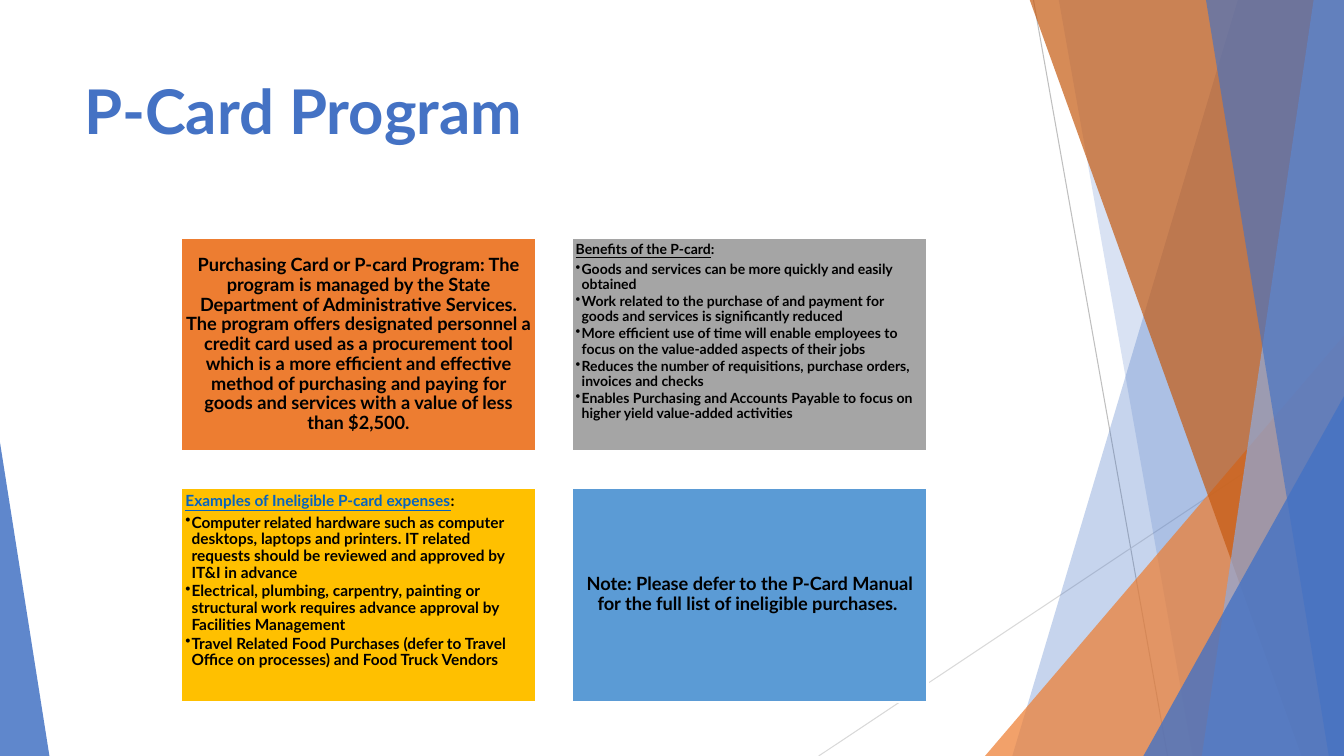
import dataclasses
import typing

import lxml.etree
import pptx
import pptx.dml.color
import pptx.enum.shapes
import pptx.enum.text
import pptx.oxml.ns
import pptx.util

Inches = pptx.util.Inches
Pt = pptx.util.Pt
qn = pptx.oxml.ns.qn
ALIGN = pptx.enum.text.PP_ALIGN
ANCHOR = pptx.enum.text.MSO_ANCHOR
SHAPE = pptx.enum.shapes.MSO_SHAPE

WIDE, HIGH, TOP = 13.33, 7.5, -0.01
FONT = "Lato"
COLORS = {
    "blue": "4472C4", "pale": "8FAADC", "sky": "5B9BD5", "link": "0563C1",
    "orange": "ED7D31", "rust": "C55A11", "gold": "FFC000", "gray": "A5A5A5",
    "black": "000000", "white": "FFFFFF", "dark": "BFBFBF", "light": "D9D9D9",
}


@dataclasses.dataclass
class Ray:
    start: tuple[float, float]
    end: tuple[float, float]
    color: str


@dataclasses.dataclass
class Band:
    top: float
    base: float
    color: str
    alpha: int


@dataclasses.dataclass
class Wedge:
    left: float
    top: float
    width: float
    apex: float
    color: str
    alpha: int


@dataclasses.dataclass
class Panel:
    color: str
    size: int
    head: str
    inset: float = 0.05
    ink: str = "black"
    items: tuple[str, ...] = ()


RAYS = [
    Ray((10.25, 0), (11.58, HIGH), "dark"),
    Ray((WIDE, 4.03), (8.12, HIGH), "light"),
]
DECOR = [
    Band(12.28, 10.04, "blue", 30),
    Band(10.5, 11.83, "blue", 20),
    Wedge(9.77, 3.33, 3.56, 1, "orange", 72),
    Band(10.21, 12.91, "rust", 70),
    Band(13.03, 11.92, "pale", 70),
    Band(11.96, 13.18, "blue", 65),
    Wedge(11.34, 3.93, 1.99, 1, "blue", 80),
    Wedge(0, 4.39, 0.49, 0, "blue", 85),
]
PANELS = [
    Panel("orange", 13, "Purchasing Card or P-card Program: The program is managed by the "
          "State Department of Administrative Services. The program offers designated "
          "personnel a credit card used as a procurement tool which is a more efficient "
          "and effective method of purchasing and paying for goods and services with a "
          "value of less than $2,500."),
    Panel("gray", 10, "Benefits of the P-card", 0.04, items=(
        "Goods and services can be more quickly and easily obtained",
        "Work related to the purchase of and payment for goods and services is "
        "significantly reduced",
        "More efficient use of time will enable employees to focus on the value-added "
        "aspects of their jobs",
        "Reduces the number of requisitions, purchase orders, invoices and checks",
        "Enables Purchasing and Accounts Payable to focus on higher yield value-added "
        "activities")),
    Panel("gold", 11, "Examples of Ineligible P-card expenses", ink="link", items=(
        "Computer related hardware such as computer desktops, laptops and printers. IT "
        "related requests should be reviewed and approved by IT&I in advance",
        "Electrical, plumbing, carpentry, painting or structural work requires advance "
        "approval by Facilities Management",
        "Travel Related Food Purchases (defer to Travel Office on processes) and Food "
        "Truck Vendors")),
    Panel("sky", 13, "Note: Please defer to the P-Card Manual for the full list of "
          "ineligible purchases. "),
]


def apply(target: typing.Any, values: dict[str, typing.Any]) -> None:
    for name, value in values.items():
        setattr(target, name, value)


def tint(name: str) -> pptx.dml.color.RGBColor:
    return pptx.dml.color.RGBColor.from_string(COLORS[name])


def paint(shape: typing.Any, color: str, alpha: int = 100) -> None:
    shape.shadow.inherit = False
    shape.fill.solid()
    shape.fill.fore_color.rgb = tint(color)
    shape.line.fill.background()
    if alpha < 100:
        node = shape._element.spPr.find(qn("a:solidFill")).find(qn("a:srgbClr"))
        lxml.etree.SubElement(node, qn("a:alpha")).set("val", str(alpha * 1000))


def write(para: typing.Any, text: str, size: int, color: str, under: bool = False) -> None:
    run = para.add_run()
    run.text = text
    apply(run.font, {"name": FONT, "size": Pt(size), "bold": True, "underline": under})
    run.font.color.rgb = tint(color)


def draw_ray(slide: typing.Any, ray: Ray) -> None:
    ends = [Inches(v) for v in ray.start + ray.end]
    line = slide.shapes.add_connector(pptx.enum.shapes.MSO_CONNECTOR.STRAIGHT, *ends)
    line.line.width = Pt(0.75)
    line.line.color.rgb = tint(ray.color)
    lxml.etree.SubElement(line._element.spPr, qn("a:effectLst"))


def draw_band(slide: typing.Any, band: Band) -> None:
    path = [(band.top, TOP), (WIDE, TOP), (WIDE, HIGH), (band.base, HIGH)]
    points = [(Inches(x), Inches(y)) for x, y in path]
    form = slide.shapes.build_freeform(*points[0])
    form.add_line_segments(points[1:], close=True)
    paint(form.convert_to_shape(), band.color, band.alpha)


def draw_wedge(slide: typing.Any, wedge: Wedge) -> None:
    box = [Inches(v) for v in (wedge.left, wedge.top, wedge.width, HIGH - wedge.top)]
    shape = slide.shapes.add_shape(SHAPE.ISOSCELES_TRIANGLE, *box)
    shape.adjustments[0] = wedge.apex
    paint(shape, wedge.color, wedge.alpha)


def draw_panel(slide: typing.Any, panel: Panel, place: int) -> None:
    row, col = divmod(place, 2)
    box = [Inches(v) for v in (1.79 + 3.88 * col, 2.36 + 2.48 * row, 3.53, 2.12)]
    shape = slide.shapes.add_shape(SHAPE.RECTANGLE, *box)
    paint(shape, panel.color)
    shape.line.color.rgb = tint("white")
    shape.line.width = Pt(1.5)
    frame = shape.text_frame
    listed = bool(panel.items)
    sides = ("left", "top", "right", "bottom")
    apply(frame, {f"margin_{side}": Inches(panel.inset) for side in sides})
    apply(frame, {"word_wrap": True,
                  "vertical_anchor": ANCHOR.TOP if listed else ANCHOR.MIDDLE})
    para = frame.paragraphs[0]
    apply(para, {"alignment": ALIGN.LEFT if listed else ALIGN.CENTER,
                 "line_spacing": 0.9, "space_after": Pt(panel.size * 0.35)})
    write(para, panel.head, panel.size, panel.ink, listed)
    if listed:
        write(para, ":", panel.size, "black")
    for item in panel.items:
        para = frame.add_paragraph()
        apply(para, {"level": 1, "alignment": ALIGN.LEFT,
                     "line_spacing": 0.9, "space_after": Pt(panel.size * 0.15)})
        props = para._p.get_or_add_pPr()
        props.set("marL", str(Inches(0.06)))
        props.set("indent", str(-Inches(0.06)))
        lxml.etree.SubElement(props, qn("a:buChar")).set("char", "•")
        write(para, item, panel.size, "black")


def draw_title(slide: typing.Any) -> None:
    title = slide.shapes.title
    apply(title, {"left": Inches(0.74), "top": Inches(0.67),
                  "width": Inches(9.4), "height": Inches(1.44)})
    apply(title.text_frame, {"vertical_anchor": ANCHOR.TOP, "word_wrap": True})
    para = title.text_frame.paragraphs[0]
    para.alignment = ALIGN.LEFT
    write(para, "P-Card Program", 44, "blue")


def main() -> None:
    deck = pptx.Presentation()
    apply(deck, {"slide_width": Inches(WIDE), "slide_height": Inches(HIGH)})
    slide = deck.slides.add_slide(deck.slide_layouts[5])
    draw_title(slide)
    for ray in RAYS:
        draw_ray(slide, ray)
    for part in DECOR:
        if isinstance(part, Band):
            draw_band(slide, part)
        else:
            draw_wedge(slide, part)
    for place, panel in enumerate(PANELS):
        draw_panel(slide, panel, place)
    deck.save("out.pptx")


if __name__ == "__main__":
    main()
